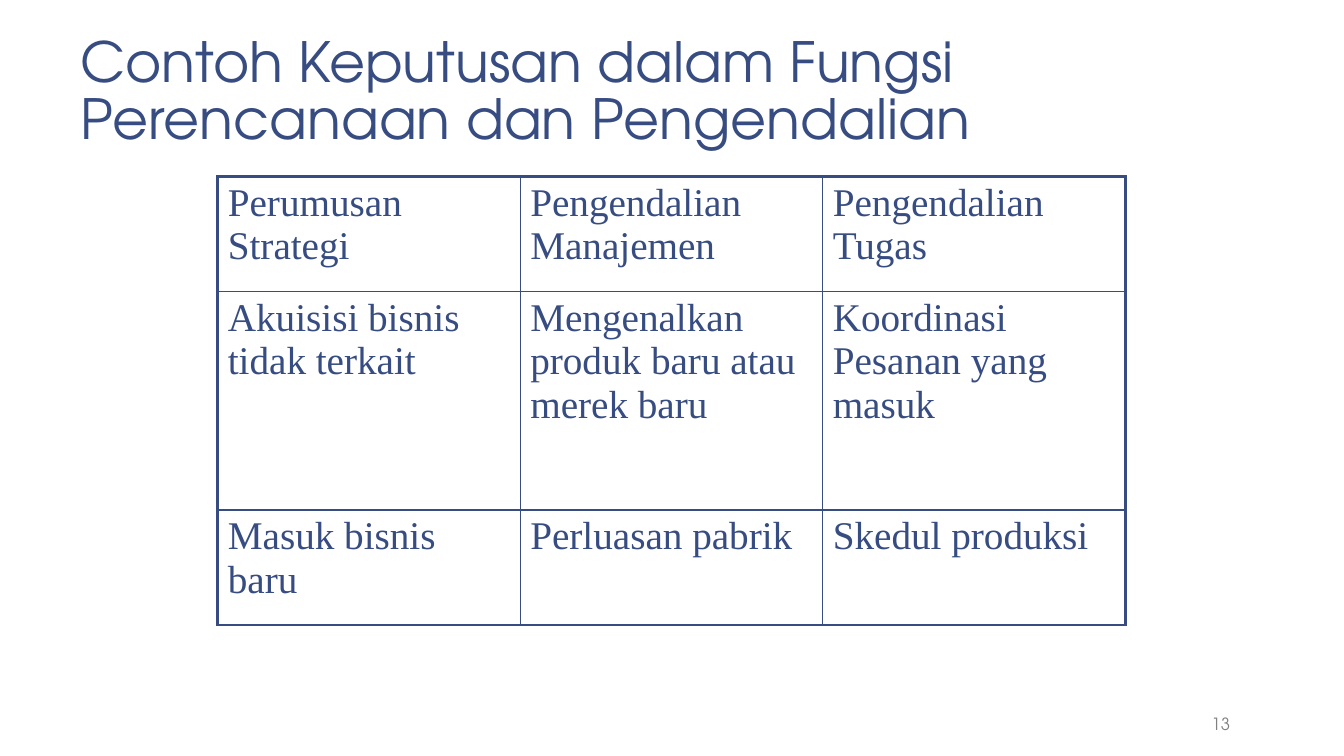
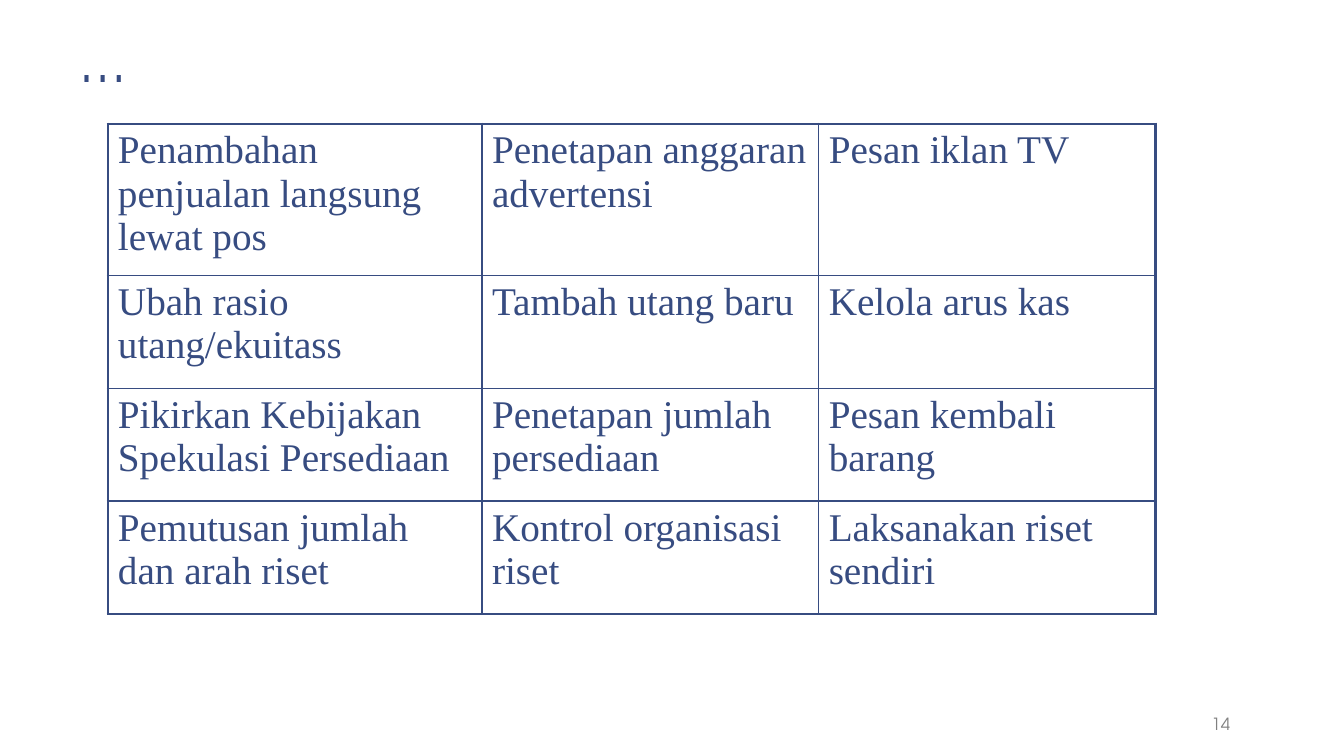
import pptx
import pptx.dml.color
import pptx.enum.text
import pptx.oxml
import pptx.oxml.ns
import pptx.util
from pptx.util import Inches

NAVY = pptx.dml.color.RGBColor(0x37, 0x4C, 0x81)
GRAY = pptx.dml.color.RGBColor(0x80, 0x80, 0x80)
WHITE = pptx.dml.color.RGBColor(0xFF, 0xFF, 0xFF)
TITLE_FONT = "TeX Gyre Adventor"
TABLE_FONT = "Times New Roman"
OUTER, INNER = 2.25, 1

SLIDES = [
    dict(
        number=13,
        title="Contoh Keputusan dalam Fungsi Perencanaan dan Pengendalian",
        origin=(2.16, 1.75), widths=[3, 3, 3], heights=[1.14, 2.17, 1.14],
        rows=[
            ["Perumusan Strategi", "Pengendalian Manajemen", "Pengendalian Tugas"],
            ["Akuisisi bisnis tidak terkait",
             "Mengenalkan produk baru atau merek baru",
             "Koordinasi Pesanan yang masuk"],
            ["Masuk bisnis baru", "Perluasan pabrik", "Skedul produksi"],
        ],
    ),
    dict(
        number=14,
        title="…",
        origin=(1.07, 1.23), widths=[3.71, 3.34, 3.34], heights=[1.39, 1.12, 1.12, 1.12],
        rows=[
            ["Penambahan penjualan langsung lewat pos",
             "Penetapan anggaran advertensi", "Pesan iklan TV"],
            ["Ubah rasio utang/ekuitass", "Tambah utang baru", "Kelola arus kas"],
            ["Pikirkan Kebijakan Spekulasi Persediaan",
             "Penetapan jumlah persediaan", "Pesan kembali barang"],
            ["Pemutusan jumlah dan arah riset",
             "Kontrol organisasi riset", "Laksanakan riset sendiri"],
        ],
    ),
]


def write(tf, text, font=TITLE_FONT, size=12, color=NAVY, align=None, spacing=None):
    p = tf.paragraphs[0]
    p.alignment = align
    p.line_spacing = spacing
    r = p.add_run()
    r.text = text
    r.font.name = font
    r.font.size = pptx.util.Pt(size)
    r.font.color.rgb = color


def add_text(s, box, text, anchor, **fmt):
    tf = s.shapes.add_textbox(*map(Inches, box)).text_frame
    tf.word_wrap = True
    tf.vertical_anchor = anchor
    tf.margin_left = tf.margin_right = Inches(0.13)
    tf.margin_top = tf.margin_bottom = Inches(0.07)
    write(tf, text, **fmt)


def set_borders(cell, **widths):
    """Draw cell borders; keys are L, R, T, B in schema order, widths in points."""
    tc_pr = cell._tc.get_or_add_tcPr()
    for i, (side, width) in enumerate(widths.items()):
        tc_pr.insert(i, pptx.oxml.parse_xml(
            f'<a:ln{side} {pptx.oxml.ns.nsdecls("a")} w="{pptx.util.Pt(width)}">'
            f'<a:solidFill><a:srgbClr val="{NAVY}"/></a:solidFill></a:ln{side}>'))


def add_grid(s, origin, widths, heights, rows):
    size = (sum(widths), sum(heights))
    table = s.shapes.add_table(len(rows), len(widths), *map(Inches, origin + size)).table
    table.first_row = table.horz_banding = False
    for column, width in zip(table.columns, widths):
        column.width = Inches(width)
    for row, height in zip(table.rows, heights):
        row.height = Inches(height)
    last_row, last_col = len(rows) - 1, len(widths) - 1
    for i, texts in enumerate(rows):
        for j, text in enumerate(texts):
            cell = table.cell(i, j)
            cell.fill.background()
            set_borders(cell,
                        L=OUTER if j == 0 else INNER,
                        R=OUTER if j == last_col else INNER,
                        T=OUTER if i == 0 else INNER,
                        B=OUTER if i == last_row else INNER)
            write(cell.text_frame, text, font=TABLE_FONT, size=28)


def add_table_slide(prs, number, title, **grid):
    s = prs.slides.add_slide(prs.slide_layouts[6])
    s.background.fill.solid()
    s.background.fill.fore_color.rgb = WHITE
    anchors = pptx.enum.text.MSO_ANCHOR
    add_text(s, (11.12, 7, 1.21, 0.35), str(number), anchors.BOTTOM,
             color=GRAY, align=pptx.enum.text.PP_ALIGN.RIGHT)
    add_text(s, (0.67, 0.3, 12, 1.25), title, anchors.TOP, size=39.6, spacing=0.85)
    add_grid(s, **grid)


def main():
    prs = pptx.Presentation()
    prs.slide_width, prs.slide_height = Inches(13.33), Inches(7.5)
    for content in SLIDES:
        add_table_slide(prs, **content)
    prs.save("out.pptx")


if __name__ == "__main__":
    main()
